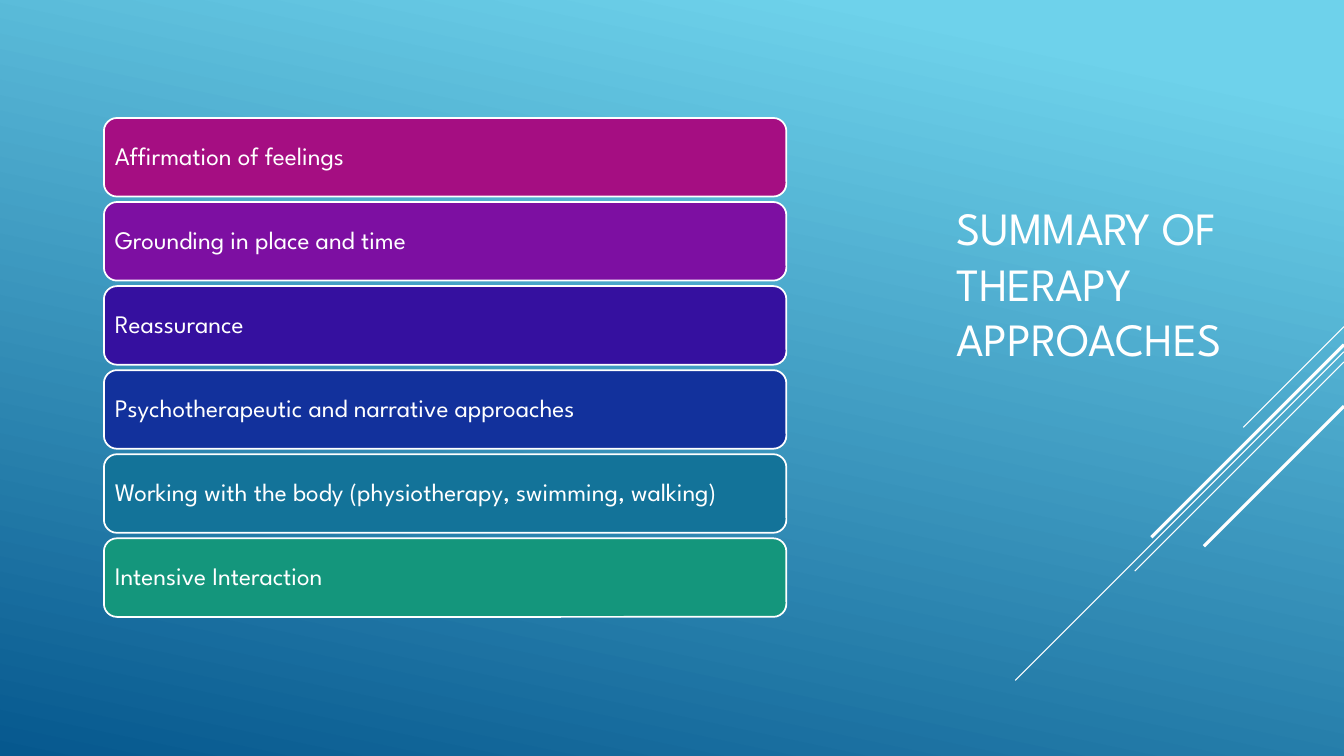
from lxml.etree import SubElement
from pptx import Presentation
from pptx.dml.color import RGBColor
from pptx.enum.shapes import MSO_CONNECTOR, MSO_SHAPE
from pptx.enum.text import MSO_ANCHOR, PP_ALIGN
from pptx.oxml.ns import qn
from pptx.util import Inches, Pt

PAGE_WIDTH, PAGE_HEIGHT = Inches(13.333), Inches(7.5)
FONT = "League Spartan"
COLORS = {
    "white": "FFFFFF",
    "sky": "6ED2EB",
    "deep": "06588E",
    "magenta": "A50E82",
    "purple": "7D0FA2",
    "indigo": "35109F",
    "blue": "12319C",
    "teal": "137399",
    "green": "14967C",
}
APPROACHES = [
    ("Affirmation of feelings", "magenta"),
    ("Grounding in place and time", "purple"),
    ("Reassurance", "indigo"),
    ("Psychotherapeutic and narrative approaches", "blue"),
    ("Working with the body (physiotherapy, swimming, walking)", "teal"),
    ("Intensive Interaction", "green"),
]
# Start row on the right edge, rows dropped, line weight in points
STREAKS = [
    (43.2, 13.33, 0.75),
    (46.53, 43.47, 0.75),
    (47.87, 27.67, 0.75),
    (45.6, 25.47, 2.25),
    (53.73, 18.53, 2.25),
]
BAR_LEFT, BAR_WIDTH = 7.73, 50.78
BAR_TOP, BAR_HEIGHT, BAR_PITCH = 15.6, 10.4, 11.12


def columns(count):
    """Length of a number of hundredths of the page width."""
    return round(PAGE_WIDTH * count / 100)


def rows(count):
    """Length of a number of hundredths of the page height."""
    return round(PAGE_HEIGHT * count / 100)


def color(name):
    return RGBColor.from_string(COLORS[name])


def write_text(shape, text, size, inset=(0.1, 0.05), spacing=1.0):
    """Fill a shape with left-aligned, vertically centred white text."""
    frame = shape.text_frame
    frame.word_wrap = True
    frame.vertical_anchor = MSO_ANCHOR.MIDDLE
    frame.margin_left = frame.margin_right = Inches(inset[0])
    frame.margin_top = frame.margin_bottom = Inches(inset[1])
    para = frame.paragraphs[0]
    para.alignment = PP_ALIGN.LEFT
    para.line_spacing = spacing
    span = para.add_run()
    span.text = text
    span.font.name = FONT
    span.font.size = Pt(size)
    span.font.color.rgb = color("white")


def paint_background(page):
    fill = page.background.fill
    fill.gradient()
    fill.gradient_angle = 258
    for stop, (position, name) in zip(fill.gradient_stops, [(0.1, "sky"), (1, "deep")]):
        stop.position = position
        stop.color.rgb = color(name)


def add_streak(page, start_row, drop, weight):
    """Draw a 45-degree line down and left from the right edge."""
    streak = page.shapes.add_connector(
        MSO_CONNECTOR.STRAIGHT,
        PAGE_WIDTH, rows(start_row),
        PAGE_WIDTH - rows(drop), rows(start_row + drop),
    )
    streak.line.color.rgb = color("white")
    streak.line.width = Pt(weight)
    SubElement(streak.element.spPr, qn("a:effectLst"))


def add_title(page, text):
    box = page.shapes.add_textbox(columns(70.43), rows(13.73), columns(25), rows(47.33))
    write_text(box, text, size=33)


def add_bar(page, index, text, fill_name):
    bar = page.shapes.add_shape(
        MSO_SHAPE.ROUNDED_RECTANGLE,
        columns(BAR_LEFT), rows(BAR_TOP + index * BAR_PITCH),
        columns(BAR_WIDTH), rows(BAR_HEIGHT),
    )
    bar.shadow.inherit = False
    bar.fill.solid()
    bar.fill.fore_color.rgb = color(fill_name)
    bar.line.color.rgb = color("white")
    bar.line.width = Pt(1.25)
    write_text(bar, text, size=18, inset=(0.07, 0.07), spacing=0.9)


def main():
    deck = Presentation()
    deck.slide_width, deck.slide_height = PAGE_WIDTH, PAGE_HEIGHT
    page = deck.slides.add_slide(deck.slide_layouts[6])
    paint_background(page)
    for streak in STREAKS:
        add_streak(page, *streak)
    add_title(page, "SUMMARY OF THERAPY APPROACHES")
    for index, (text, fill_name) in enumerate(APPROACHES):
        add_bar(page, index, text, fill_name)
    deck.save("out.pptx")


if __name__ == "__main__":
    main()
